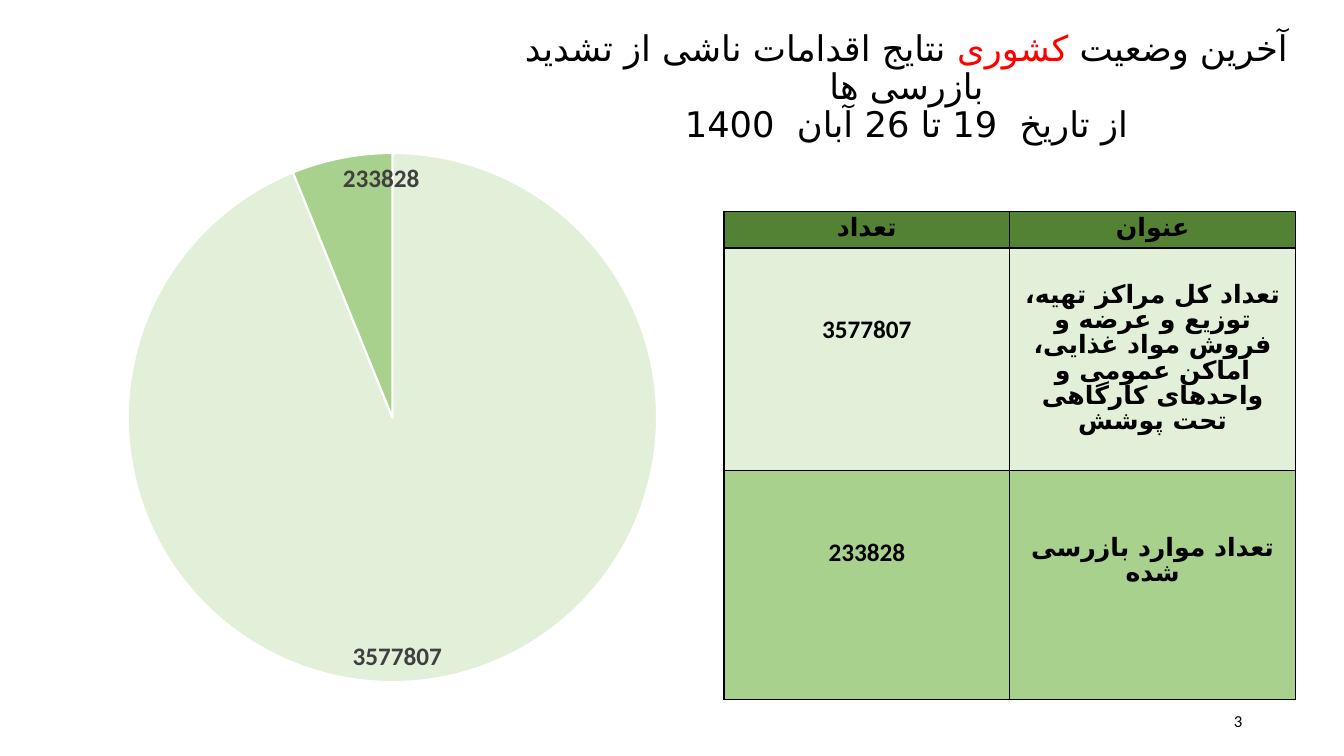
"""Build a slide with a pie chart and a table of national inspection results."""
from lxml.etree import SubElement
from pptx import Presentation
from pptx.chart.data import CategoryChartData
from pptx.dml.color import RGBColor
from pptx.enum.chart import XL_CHART_TYPE as ChartType, XL_LABEL_POSITION as LabelPosition
from pptx.enum.text import MSO_ANCHOR as Anchor, PP_ALIGN as Align
from pptx.oxml import parse_xml
from pptx.oxml.ns import nsdecls, qn
from pptx.util import Inches, Pt

COLORS = {
    "text": "000000",
    "accent": "FF0000",
    "label": "404040",
    "white": "FFFFFF",
    "header": "548235",
    "total": "E2F0D9",
    "inspected": "A9D18E",
}
FONT = "Calibri"
PERSIAN_FONT = "DejaVu Sans"
TITLE = [
    ("آخرین وضعیت ", "text"),
    ("کشوری", "accent"),
    (" نتایج اقدامات ناشی از تشدید بازرسی ها\vاز تاریخ  19 تا 26 آبان  1400", "text"),
]
HEADINGS = ("تعداد", "عنوان")
RESULTS = [
    (3577807, "تعداد کل مراکز تهیه، توزیع و عرضه و فروش مواد غذایی، "
              "اماکن عمومی و واحدهای کارگاهی تحت پوشش", "total"),
    (233828, "تعداد موارد بازرسی شده", "inspected"),
]
PAGE_NUMBER = "3"
TITLE_BOX = (4.65, 0.31, 8.68, 1.13)
NUMBER_BOX = (9.42, 6.95, 3, 0.4)
CHART_BOX = (0.92, 0.79, 5.64, 6.02)
TABLE_BOX = (7.18, 2.1, 5.67, 4.84)
ROW_HEIGHTS = (0.36, 2.21, 2.27)
NUMBER_TOP = 0.66
CAPTION_TOPS = (0.36, 0.66)
PLOT_LAYOUT = {"x": 0.054, "y": 0.121, "w": 0.946, "h": 0.872}


def color(name):
    return RGBColor.from_string(COLORS[name])


def inches(box):
    return [Inches(length) for length in box]


def style(font, size, shade="text", bold=False):
    font.name, font.size, font.bold = FONT, Pt(size), bold
    font.color.rgb = color(shade)


def style_span(span, size, shade="text", bold=False):
    style(span.font, size, shade, bold)
    props = span._r.get_or_add_rPr()
    props.set("lang", "fa-IR")
    SubElement(props, qn("a:cs")).set("typeface", PERSIAN_FONT)


def add_text(page, box, spans, size, align):
    frame = page.shapes.add_textbox(*inches(box)).text_frame
    frame.word_wrap = True
    frame.vertical_anchor = Anchor.MIDDLE
    para = frame.paragraphs[0]
    para.alignment = align
    for text, shade in spans:
        for index, part in enumerate(text.split("\v")):
            if index:
                para.add_line_break()
            span = para.add_run()
            span.text = part
            style_span(span, size, shade)
    return para


def add_title(page):
    para = add_text(page, TITLE_BOX, TITLE, 25.2, Align.CENTER)
    para.line_spacing = 0.9
    para._p.get_or_add_pPr().set("rtl", "1")


def add_pie(page):
    data = CategoryChartData()
    data.categories = [str(index + 1) for index in range(len(RESULTS))]
    data.add_series("Series 1", [value for value, _, _ in RESULTS])
    chart = page.shapes.add_chart(ChartType.PIE, *inches(CHART_BOX), data).chart
    chart.has_title = chart.has_legend = False
    style(chart.font, 10)
    plot = chart.plots[0]
    plot.vary_by_categories = True
    series = plot.series[0]
    for index, (_, _, shade) in enumerate(RESULTS):
        wedge = series.points[index].format
        wedge.fill.solid()
        wedge.fill.fore_color.rgb = color(shade)
        wedge.line.color.rgb = color("white")
        wedge.line.width = Pt(1.5)
    labels = series.data_labels
    labels.show_value = True
    labels.position = LabelPosition.INSIDE_END
    style(labels.font, 18, "label", True)
    area = chart._chartSpace.chart.plotArea
    for old in area.findall(qn("c:layout")):
        area.remove(old)
    layout = parse_xml(f"<c:layout {nsdecls('c')}><c:manualLayout/></c:layout>")
    settings = {"layoutTarget": "inner", "xMode": "edge", "yMode": "edge", **PLOT_LAYOUT}
    for tag, value in settings.items():
        SubElement(layout[0], qn(f"c:{tag}")).set("val", str(value))
    area.insert(0, layout)


def fill_cell(cell, text, shade, top, line_spacing):
    cell.text = text
    cell.margin_top = Inches(top)
    para = cell.text_frame.paragraphs[0]
    para.alignment = Align.CENTER
    para.line_spacing = line_spacing
    style_span(para.runs[0], 18, bold=True)
    props = cell._tc.get_or_add_tcPr()
    for side in ("lnL", "lnR", "lnT", "lnB"):
        props.append(parse_xml(
            f'<a:{side} {nsdecls("a")} w="12700"><a:solidFill>'
            f'<a:srgbClr val="{COLORS["text"]}"/></a:solidFill></a:{side}>'))
    cell.fill.solid()
    cell.fill.fore_color.rgb = color(shade)


def add_results(page):
    rows, columns = len(RESULTS) + 1, len(HEADINGS)
    table = page.shapes.add_table(rows, columns, *inches(TABLE_BOX)).table
    table.first_row = table.horz_banding = False
    for row, height in zip(table.rows, ROW_HEIGHTS):
        row.height = Inches(height)
    for index, heading in enumerate(HEADINGS):
        fill_cell(table.cell(0, index), heading, "header", 0.05, Pt(18))
    for row, ((value, caption, shade), top) in enumerate(zip(RESULTS, CAPTION_TOPS), 1):
        fill_cell(table.cell(row, 0), str(value), shade, NUMBER_TOP, 1.0)
        fill_cell(table.cell(row, 1), caption, shade, top, Pt(18))


def main():
    deck = Presentation()
    deck.slide_width, deck.slide_height = Inches(13.33), Inches(7.5)
    page = deck.slides.add_slide(deck.slide_layouts[6])
    add_title(page)
    add_results(page)
    add_text(page, NUMBER_BOX, [(PAGE_NUMBER, "text")], 12, Align.RIGHT)
    add_pie(page)
    deck.save("out.pptx")


if __name__ == "__main__":
    main()
